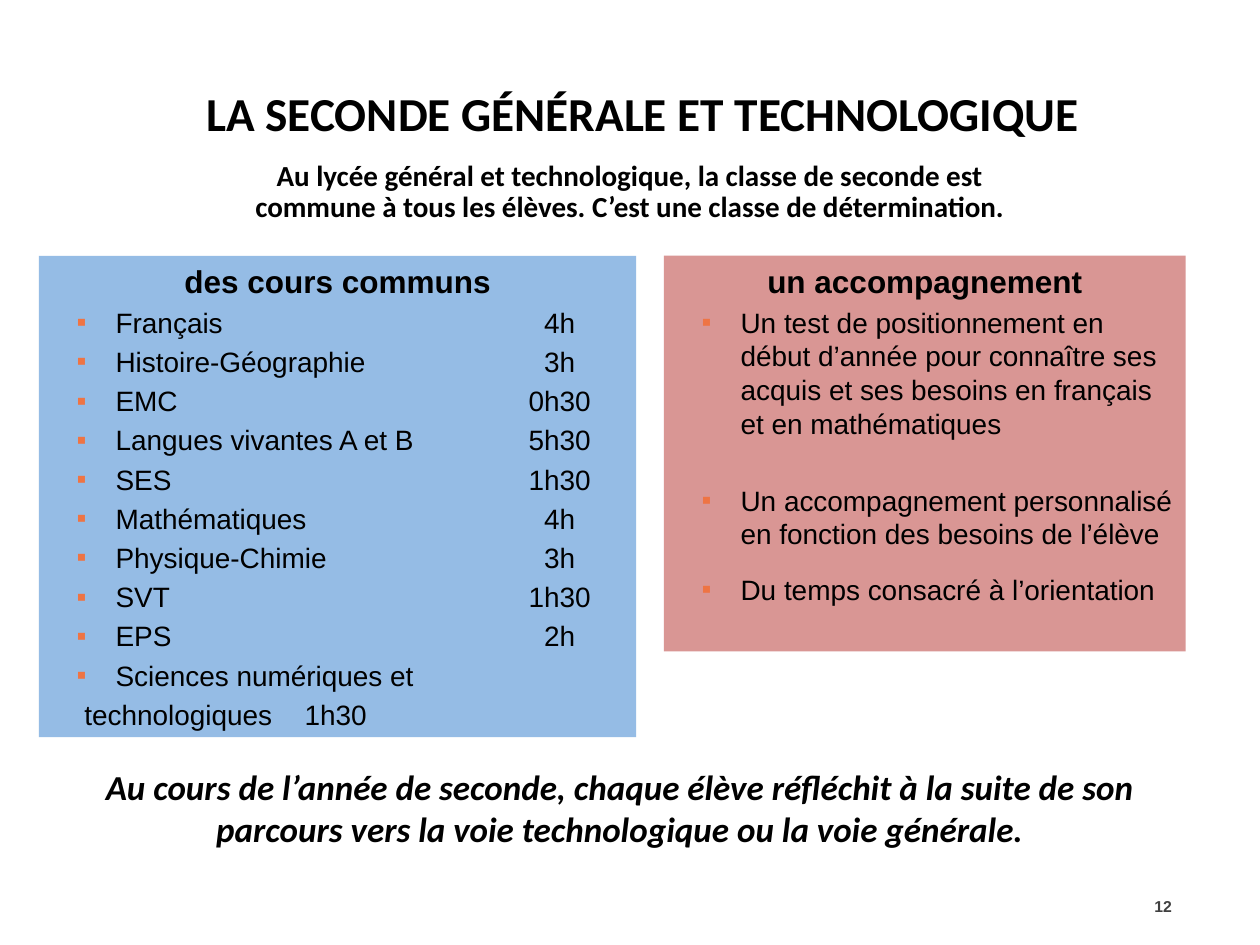
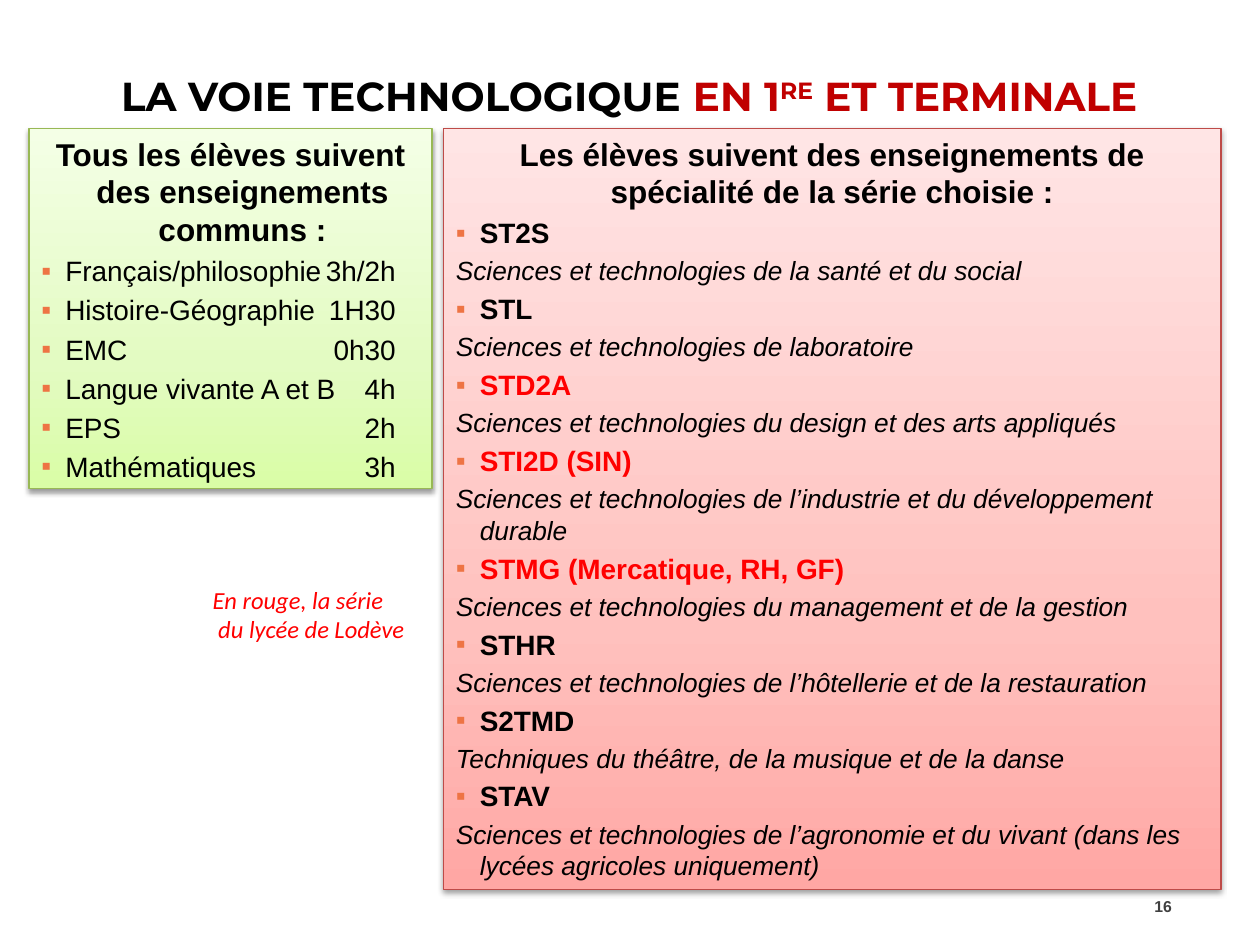
from dataclasses import dataclass
from typing import Optional

from lxml.etree import SubElement
from pptx import Presentation
from pptx.dml.color import RGBColor
from pptx.enum.shapes import MSO_SHAPE as Shape
from pptx.enum.text import MSO_ANCHOR as Anchor
from pptx.enum.text import MSO_AUTO_SIZE as Fit
from pptx.enum.text import PP_ALIGN as Align
from pptx.oxml.ns import qn
from pptx.util import Inches, Pt

HUES = {
    "black": "000000", "gray": "404040", "bullet": "EE7444",
    "red": "FF0000", "dark": "C00000", "rose": "D99694", "blue": "95BCE5",
    "leaf": "98B855", "brick": "BE4B48",
}
GREENS = ("D9FDA6", "E3FBC2", "F4FFE6")
PINKS = ("FFA7A4", "FFC1BE", "FFE5E5")
STOPS = (0, 35, 100)


@dataclass
class Box:
    left: float
    top: float
    width: float
    height: float

    def place(self) -> tuple:
        return tuple(map(Inches, (self.left, self.top, self.width, self.height)))


@dataclass
class Panel:
    box: Box
    fill: str = ""
    fade: tuple = ()
    edge: str = ""


@dataclass
class Course:
    name: str
    hours: str


@dataclass
class Track:
    code: str
    name: str
    local: bool = False


NUMBER = Box(8.91, 6.99, 0.49, 0.4)
WIDE = {"indent": 0.51, "hang": 0.31}
SLIM = {"indent": 0.19, "hang": 0.19}

COMMON = [
    Course("Français", "4h"),
    Course("Histoire-Géographie", "3h"),
    Course("EMC", "0h30"),
    Course("Langues vivantes A et B", "5h30"),
    Course("SES", "1h30"),
    Course("Mathématiques", "4h"),
    Course("Physique-Chimie", "3h"),
    Course("SVT", "1h30"),
    Course("EPS", "2h"),
]
SHARED = [
    Course("Français/philosophie", "3h/2h"),
    Course("Histoire-Géographie", "1H30"),
    Course("EMC", "0h30"),
    Course("Langue vivante A et B", "4h"),
    Course("EPS", "2h"),
    Course("Mathématiques", "3h"),
]
TRACKS = [
    Track("ST2S", "Sciences et technologies de la santé et du social"),
    Track("STL", "Sciences et technologies de laboratoire"),
    Track("STD2A", "Sciences et technologies du design et des arts appliqués", True),
    Track("STI2D (SIN)", "Sciences et technologies de l’industrie et du développement durable", True),
    Track("STMG (Mercatique, RH, GF)", "Sciences et technologies du management et de la gestion", True),
    Track("STHR", "Sciences et technologies de l’hôtellerie et de la restauration"),
    Track("S2TMD", "Techniques du théâtre, de la musique et de la danse"),
    Track("STAV", "Sciences et technologies de l’agronomie et du vivant (dans les lycées agricoles uniquement)"),
]


def write(frame, text: str, *, size: float = 16, font: str = "Arial",
          hue: str = "black", bold: bool = False, slant: bool = False,
          align=Align.LEFT, before: float = 0, lead: Optional[float] = None,
          indent: float = 0, hang: float = 0, bullet: bool = False,
          tab: float = 0, stop: str = "r", para=None, lift: int = 0):
    if para is None:
        para = frame.paragraphs[0]
        if para.runs:
            para = frame.add_paragraph()
        para.alignment = align
        para.space_before = Pt(before)
        if lead:
            para.line_spacing = lead
        props = para._p.get_or_add_pPr()
        props.set("marL", str(Inches(indent)))
        props.set("indent", str(-Inches(hang)))
        if bullet:
            tint = SubElement(props, qn("a:buClr"))
            SubElement(tint, qn("a:srgbClr"), val=HUES["bullet"])
            SubElement(props, qn("a:buFont"), typeface="Arial")
            SubElement(props, qn("a:buChar"), char="▪")
        if tab:
            tabs = SubElement(props, qn("a:tabLst"))
            SubElement(tabs, qn("a:tab"), pos=str(Inches(tab)), algn=stop)
    run = para.add_run()
    run.text = text
    face = run.font
    face.name, face.size, face.bold, face.italic = font, Pt(size), bold, slant
    face.color.rgb = RGBColor.from_string(HUES[hue])
    if lift:
        run._r.get_or_add_rPr().set("baseline", str(lift * 1000))
    return para


def setup(frame, anchor=Anchor.TOP):
    frame.word_wrap = True
    frame.auto_size = Fit.NONE
    frame.vertical_anchor = anchor
    return frame


def label(slide, box: Box, anchor=Anchor.TOP):
    return setup(slide.shapes.add_textbox(*box.place()).text_frame, anchor)


def start(deck, box: Box, number: int):
    slide = deck.slides.add_slide(deck.slide_layouts[5])
    title = slide.shapes.title
    title.left, title.top, title.width, title.height = box.place()
    write(label(slide, NUMBER, Anchor.MIDDLE), str(number), size=9,
          hue="gray", bold=True, align=Align.RIGHT)
    return slide, setup(title.text_frame, Anchor.MIDDLE)


def shade(shape, fade: tuple) -> None:
    shape.fill.gradient()
    props = shape._element.spPr
    stops = props.find(qn("a:gradFill")).find(qn("a:gsLst"))
    for old in list(stops):
        stops.remove(old)
    for spot, tint in zip(STOPS, fade):
        mark = SubElement(stops, qn("a:gs"), pos=str(spot * 1000))
        SubElement(mark, qn("a:srgbClr"), val=tint)
    props.find(qn("a:gradFill")).find(qn("a:lin")).set("ang", str(270 * 60000))
    cast = SubElement(props.find(qn("a:effectLst")), qn("a:outerShdw"),
                      blurRad=str(Pt(3.1)), dist=str(Pt(1.6)),
                      dir=str(90 * 60000), rotWithShape="0")
    tint = SubElement(cast, qn("a:srgbClr"), val=HUES["black"])
    SubElement(tint, qn("a:alpha"), val="38000")


def draw(slide, panel: Panel):
    shape = slide.shapes.add_shape(Shape.RECTANGLE, *panel.box.place())
    shape.shadow.inherit = False
    if panel.fade:
        shade(shape, panel.fade)
        shape.line.color.rgb = RGBColor.from_string(HUES[panel.edge])
        shape.line.width = Pt(0.75)
    else:
        shape.fill.solid()
        shape.fill.fore_color.rgb = RGBColor.from_string(HUES[panel.fill])
        shape.line.fill.background()
    return setup(shape.text_frame)


def head(frame, text: str, **form) -> None:
    write(frame, text, size=18, bold=True, align=Align.CENTER, before=3.6, **form)


def item(frame, text: str, **form) -> None:
    write(frame, text, **{"before": 3.2, "bullet": True, **form})


def hours(frame, rows: list, **form) -> None:
    for row in rows:
        item(frame, f"{row.name}\t{row.hours}", **form)


def second(deck) -> None:
    slide, title = start(deck, Box(0.47, 0.39, 9.26, 1), 12)
    write(title, "LA SECONDE GÉNÉRALE ET TECHNOLOGIQUE", size=27,
          font="Calibri", bold=True, align=Align.CENTER)
    write(label(slide, Box(1.69, 1.23, 6.61, 0.7)),
          "Au lycée général et technologique, la classe de seconde est "
          "commune à tous les élèves. C’est une classe de détermination.",
          size=16.6, font="Calibri", bold=True, align=Align.CENTER,
          before=3.6, lead=0.9)

    help_ = draw(slide, Panel(Box(5.27, 2.03, 4.14, 3.14), "rose"))
    head(help_, "un accompagnement")
    item(help_, "Un test de positionnement en début d’année pour connaître ses "
         "acquis et ses besoins en français et en mathématiques", **WIDE)
    item(help_, "Un accompagnement personnalisé en fonction des besoins de l’élève",
         **{**WIDE, "before": 24.8})
    item(help_, "Du temps consacré à l’orientation", lead=1.5, **WIDE)

    write(label(slide, Box(0.43, 6.03, 8.98, 0.76)),
          "Au cours de l’année de seconde, chaque élève réfléchit à la suite de "
          "son parcours vers la voie technologique ou la voie générale.",
          size=20, font="Calibri", bold=True, slant=True, align=Align.CENTER)

    core = draw(slide, Panel(Box(0.31, 2.03, 4.74, 3.82), "blue"))
    head(core, "des cours communs")
    form = {**WIDE, "tab": 4.19, "stop": "ctr"}
    hours(core, COMMON, **form)
    item(core, "Sciences numériques et", **WIDE)
    item(core, " technologiques\t1h30", **{**form, "bullet": False})


def techno(deck) -> None:
    slide, title = start(deck, Box(0.23, 0.39, 9.53, 0.78), 16)
    face = {"size": 23.1, "font": "Montserrat", "bold": True}
    para = write(title, "LA VOIE TECHNOLOGIQUE ", align=Align.CENTER, lead=0.9, **face)
    for text, lift in (("EN 1", 0), ("RE", 30), (" ET TERMINALE", 0)):
        write(title, text, para=para, lift=lift, hue="dark", **face)

    core = draw(slide, Panel(Box(0.23, 1.02, 3.2, 2.86), fade=GREENS, edge="leaf"))
    head(core, "Tous les élèves suivent des enseignements communs :", **SLIM)
    hours(core, SHARED, tab=2.96, **SLIM)

    major = draw(slide, Panel(Box(3.52, 1.02, 6.17, 6.04), fade=PINKS, edge="brick"))
    head(major, "Les élèves suivent des enseignements de spécialité de la série choisie :")
    for track in TRACKS:
        item(major, track.code, bold=True,
             hue="red" if track.local else "black", **SLIM)
        write(major, track.name, size=15, slant=True, before=3, **SLIM)

    note = label(slide, Box(1.59, 4.59, 1.84, 0.56))
    for text in ("En rouge, la série", " du lycée de Lodève"):
        write(note, text, size=14, font="Calibri", hue="red", slant=True)


def main() -> None:
    deck = Presentation()
    deck.slide_width, deck.slide_height = Inches(10), Inches(7.5)
    second(deck)
    techno(deck)
    deck.save("out.pptx")


if __name__ == "__main__":
    main()
